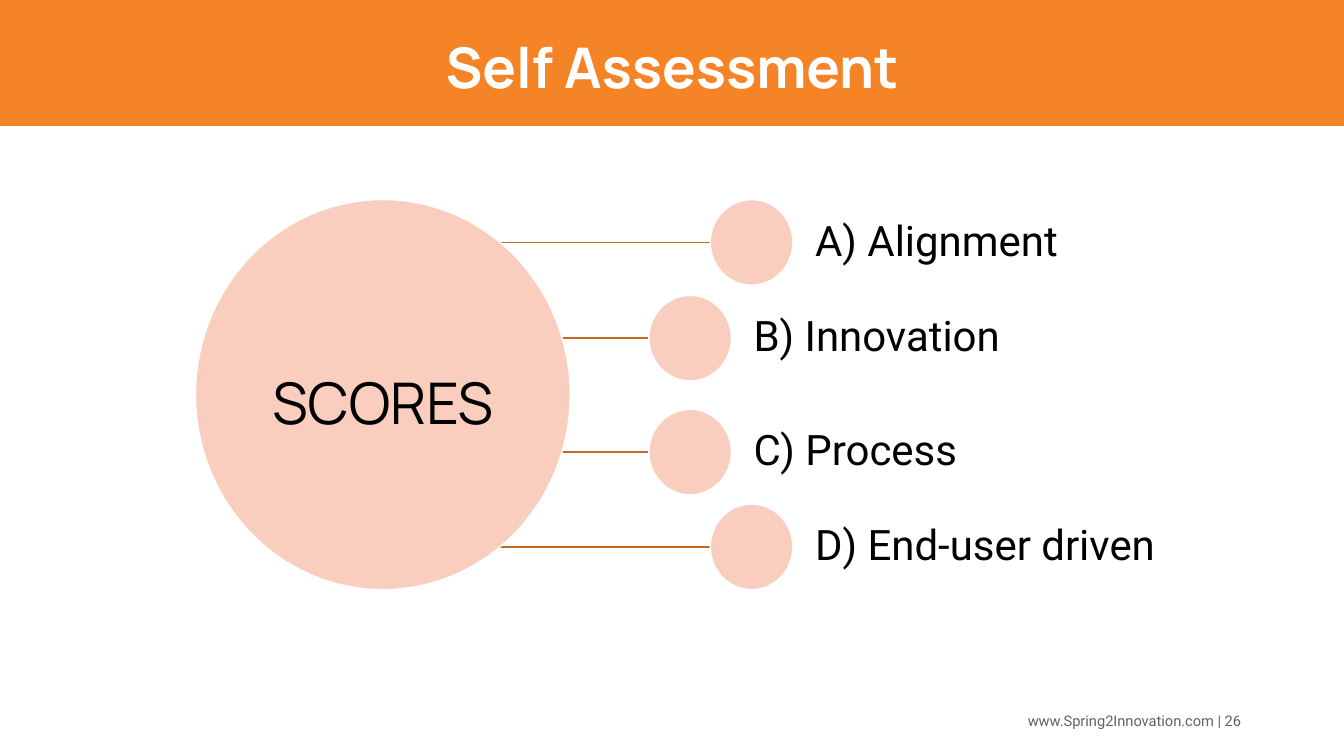
from dataclasses import dataclass

from lxml.etree import SubElement
from pptx import Presentation
from pptx.dml.color import RGBColor
from pptx.enum.shapes import MSO_CONNECTOR, MSO_SHAPE
from pptx.enum.text import MSO_ANCHOR as Anchor, PP_ALIGN as Align
from pptx.oxml.ns import qn
from pptx.util import Inches, Pt


@dataclass(frozen=True)
class Theme:
    orange: str = "F58426"
    peach: str = "FACEBE"
    rust: str = "C46A1E"
    white: str = "FFFFFF"
    black: str = "000000"
    grey: str = "626266"
    heading_font: str = "Manrope"
    body_font: str = "Roboto"
    title_size: float = 40
    hub_size: float = 41
    label_size: float = 30
    footer_size: float = 10.5
    line_width: float = 1


THEME = Theme()
SLIDE_WIDTH, SLIDE_HEIGHT = 13.34, 7.5
BANNER_HEIGHT = 1.25
HUB = (1.94, 1.98, 3.72, 3.87)
HUB_CENTRE = HUB[0] + HUB[2] / 2
DOT_WIDTH, DOT_HEIGHT = 0.82, 0.85

# Label, left and top of its dot, width of its text
SCORES = [
    ("A) Alignment", 7.05, 1.98, 2.9),
    ("B) Innovation", 6.44, 2.93, 3.04),
    ("C) Process", 6.44, 4.06, 2.66),
    ("D) End-user driven", 7.05, 5.0, 4.55),
]


def rgb(value):
    return RGBColor.from_string(value)


def add_filled(page, kind, place, fill, outline=None):
    shape = page.shapes.add_shape(kind, *map(Inches, place))
    shape.shadow.inherit = False
    shape.fill.solid()
    shape.fill.fore_color.rgb = rgb(fill)
    if outline:
        shape.line.color.rgb = rgb(outline)
        shape.line.width = Pt(THEME.line_width)
    else:
        shape.line.fill.background()


def add_text(page, text, place, font, size, color, align=Align.LEFT,
             anchor=Anchor.MIDDLE, insets=(0.1, 0.05), spacing=1.0, bold=False):
    box = page.shapes.add_textbox(*map(Inches, place))
    frame = box.text_frame
    frame.word_wrap = True
    frame.vertical_anchor = anchor
    frame.margin_left = frame.margin_right = Inches(insets[0])
    frame.margin_top = frame.margin_bottom = Inches(insets[1])
    para = frame.paragraphs[0]
    para.alignment = align
    para.line_spacing = spacing
    span = para.add_run()
    span.text = text
    span.font.name = font
    span.font.size = Pt(size)
    span.font.bold = bold
    span.font.color.rgb = rgb(color)


def add_spoke(page, dot_left, dot_top):
    y = Inches(dot_top + DOT_HEIGHT / 2)
    spoke = page.shapes.add_connector(
        MSO_CONNECTOR.STRAIGHT, Inches(HUB_CENTRE), y,
        Inches(dot_left + DOT_WIDTH / 2), y)
    spoke.line.color.rgb = rgb(THEME.rust)
    spoke.line.width = Pt(THEME.line_width)
    SubElement(spoke.element.spPr, qn("a:effectLst"))


def add_score(page, label, left, top, width):
    add_filled(page, MSO_SHAPE.OVAL, (left, top, DOT_WIDTH, DOT_HEIGHT),
               THEME.peach, THEME.white)
    add_text(page, label, (left + DOT_WIDTH, top, width, DOT_HEIGHT),
             THEME.body_font, THEME.label_size, THEME.black,
             insets=(0.22, 0), spacing=0.9)


def main():
    deck = Presentation()
    deck.slide_width = Inches(SLIDE_WIDTH)
    deck.slide_height = Inches(SLIDE_HEIGHT)
    page = deck.slides.add_slide(deck.slide_layouts[6])

    # Footer
    add_text(page, "www.Spring2Innovation.com | 26", (9.42, 6.95, 3, 0.4),
             THEME.body_font, THEME.footer_size, THEME.grey, Align.RIGHT)

    # Title banner
    banner = (0, 0, SLIDE_WIDTH, BANNER_HEIGHT)
    add_filled(page, MSO_SHAPE.RECTANGLE, banner, THEME.orange)
    add_text(page, "Self Assessment", banner, THEME.heading_font,
             THEME.title_size, THEME.white, Align.CENTER, spacing=1.1, bold=True)

    # Spokes run behind the hub and the dots
    for _, left, top, _ in SCORES:
        add_spoke(page, left, top)

    # Hub
    add_filled(page, MSO_SHAPE.OVAL, HUB, THEME.peach, THEME.white)
    add_text(page, "SCORES", (2.61, 3.64, 2.38, 0.69), THEME.heading_font,
             THEME.hub_size, THEME.black, Align.CENTER, Anchor.BOTTOM,
             insets=(0, 0), spacing=0.9)

    # Score dots and labels
    for score in SCORES:
        add_score(page, *score)

    deck.save("out.pptx")


if __name__ == "__main__":
    main()
